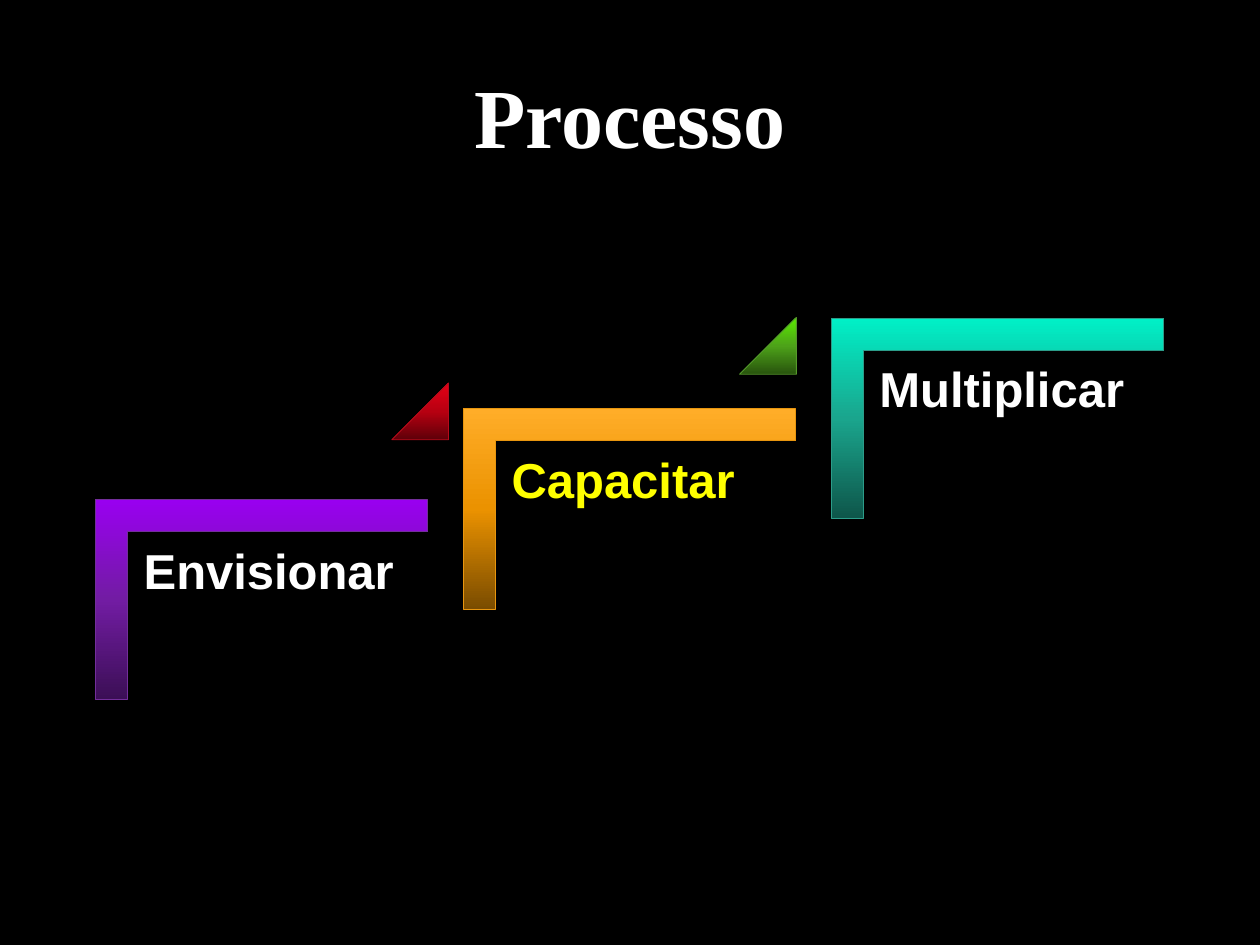
import pptx
import pptx.dml.color
import pptx.enum.shapes
import pptx.enum.text
import pptx.oxml
import pptx.oxml.ns
import pptx.util

Inches = pptx.util.Inches
SHAPES = pptx.enum.shapes.MSO_SHAPE

TITLE = "Processo"
STEPS = [
    {"label": "Envisionar", "text": "white", "gradient": ("3B0F55", "721CA3", "9900F0"), "line": "732E9A"},
    {"label": "Capacitar", "text": "yellow", "gradient": ("7A4C00", "EB9200", "FFAD28"), "line": "E8950E"},
    {"label": "Multiplicar", "text": "white", "gradient": ("0E564A", "1AA58D", "00F0C7"), "line": "2C9C89"},
]
RISES = [
    {"at": (3.11, 3.04), "gradient": ("5F0009", "B70011", "E60016"), "line": "B50B1B"},
    {"at": (5.87, 2.52), "gradient": ("28540D", "4DA219", "5AEB00"), "line": "55992B"},
]
THEME = {
    "background": "000000",
    "white": "FFFFFF",
    "yellow": "FFFF00",
    "title": {"name": "Times New Roman", "size": pptx.util.Pt(48), "bold": True},
    "label": {"name": "Arial", "size": pptx.util.Pt(28), "bold": True},
    "line_width": pptx.util.Pt(0.5),
}
TITLE_BOX = (0.75, 0.13, 8.5, 1.56)
CORNER_START = (1.28, 3.44)
CORNER_SIZE = (1.59, 2.64)
CORNER_ARM = 0.16
LABEL_START = (1.02, 4.22)
LABEL_SIZE = (2.39, 2.09)
LABEL_INSET = 0.12
STEP_ACROSS, STEP_UP = 2.92, 0.72
TRIANGLE_SIZE = (0.45, 0.45)


def color(value):
    return pptx.dml.color.RGBColor.from_string(value)


def apply_format(target, values):
    for name, value in values.items():
        setattr(target, name, value)


def box(position, size):
    return [Inches(value) for value in (*position, *size)]


def step_position(start, index):
    return start[0] + index * STEP_ACROSS, start[1] - index * STEP_UP


def write_text(text_frame, text, font_format, text_color, paragraph_format):
    paragraph = text_frame.paragraphs[0]
    apply_format(paragraph, paragraph_format)
    run = paragraph.add_run()
    run.text = text
    apply_format(run.font, font_format)
    run.font.color.rgb = color(text_color)


def fill_gradient(shape, colors):
    shape.fill.gradient()
    shape.fill.gradient_angle = 90
    gradient = shape.element.spPr.find(pptx.oxml.ns.qn("a:gradFill"))
    gradient.set("rotWithShape", "0")
    stops = "".join(
        f'<a:gs pos="{index * 50000}"><a:srgbClr val="{value}"/></a:gs>'
        for index, value in enumerate(colors)
    )
    stop_list = pptx.oxml.parse_xml(f'<a:gsLst {pptx.oxml.ns.nsdecls("a")}>{stops}</a:gsLst>')
    gradient.replace(gradient.find(pptx.oxml.ns.qn("a:gsLst")), stop_list)


def add_gradient_shape(slide, kind, position, size, adjustments, style):
    shape = slide.shapes.add_shape(kind, *box(position, size))
    for index, value in enumerate(adjustments):
        shape.adjustments[index] = value
    shape.shadow.inherit = False
    fill_gradient(shape, style["gradient"])
    shape.line.color.rgb = color(style["line"])
    shape.line.width = THEME["line_width"]
    return shape


def add_step(slide, index, step):
    corner = add_gradient_shape(
        slide, SHAPES.CORNER, step_position(CORNER_START, index), CORNER_SIZE,
        (CORNER_ARM, CORNER_ARM), step,
    )
    corner.rotation = 90
    label = slide.shapes.add_textbox(*box(step_position(LABEL_START, index), LABEL_SIZE))
    apply_format(label.text_frame, {
        "word_wrap": True,
        **{f"margin_{side}": Inches(LABEL_INSET) for side in ("left", "top", "right", "bottom")},
    })
    write_text(label.text_frame, step["label"], THEME["label"], THEME[step["text"]], {"line_spacing": 0.9})


def main():
    presentation = pptx.Presentation()
    apply_format(presentation, {"slide_width": Inches(10), "slide_height": Inches(7.5)})
    slide = presentation.slides.add_slide(presentation.slide_layouts[5])
    slide.background.fill.solid()
    slide.background.fill.fore_color.rgb = color(THEME["background"])

    title = slide.shapes.title
    apply_format(title, dict(zip(("left", "top", "width", "height"), map(Inches, TITLE_BOX))))
    title.text_frame.vertical_anchor = pptx.enum.text.MSO_ANCHOR.MIDDLE
    write_text(title.text_frame, TITLE, THEME["title"], THEME["white"],
               {"alignment": pptx.enum.text.PP_ALIGN.CENTER})

    for index, step in enumerate(STEPS):
        add_step(slide, index, step)
    for rise in RISES:
        add_gradient_shape(slide, SHAPES.ISOSCELES_TRIANGLE, rise["at"], TRIANGLE_SIZE, (1,), rise)

    presentation.save("out.pptx")


if __name__ == "__main__":
    main()
